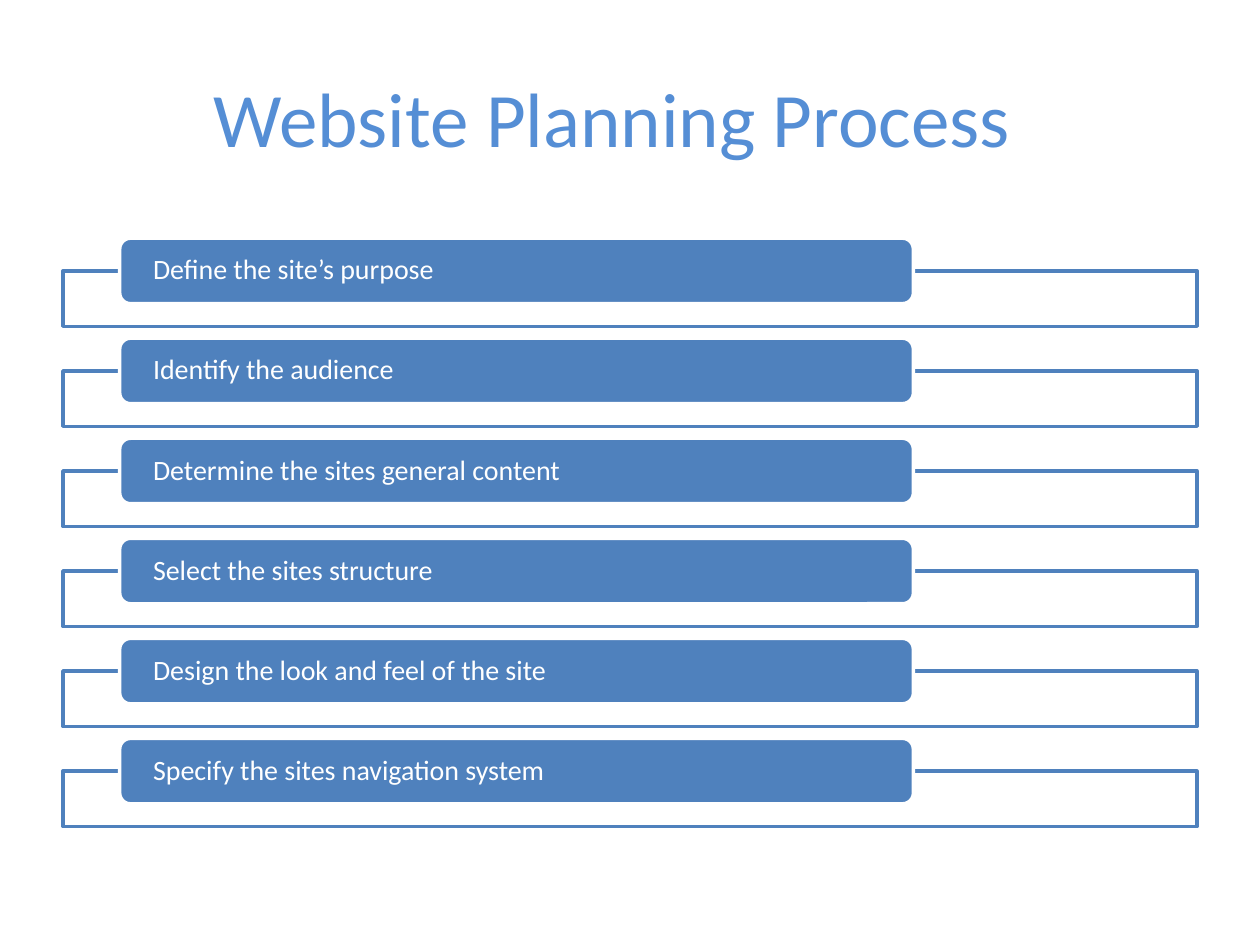
"""Build the Website Planning Process slide."""
from lxml import etree
from pptx import Presentation
from pptx.dml.color import RGBColor
from pptx.enum.shapes import MSO_SHAPE
from pptx.enum.text import MSO_ANCHOR, PP_ALIGN
from pptx.oxml.ns import qn
from pptx.util import Inches, Pt

TITLE = "Website Planning Process"
STEPS = [
    "Define the site’s purpose",
    "Identify the audience",
    "Determine the sites general content",
    "Select the sites structure",
    "Design the look and feel of the site",
    "Specify the sites navigation system",
]

FONT = "Calibri"
BLUE = RGBColor(0x4F, 0x81, 0xBD)
TITLE_BLUE = RGBColor(0x55, 0x8E, 0xD5)
WHITE = RGBColor(0xFF, 0xFF, 0xFF)
RECTANGLE, ROUNDED = MSO_SHAPE.RECTANGLE, MSO_SHAPE.ROUNDED_RECTANGLE
MIDDLE, LEFT, CENTER = MSO_ANCHOR.MIDDLE, PP_ALIGN.LEFT, PP_ALIGN.CENTER

FIRST_TOP, LAST_TOP = 1.89, 5.86
PITCH = (LAST_TOP - FIRST_TOP) / (len(STEPS) - 1)
LABEL_HEIGHT = 0.52


def write(frame, text, size, color, alignment):
    frame.word_wrap = True
    frame.vertical_anchor = MIDDLE
    paragraph = frame.paragraphs[0]
    paragraph.alignment = alignment
    run = paragraph.add_run()
    run.text = text
    run.font.name = FONT
    run.font.size = Pt(size)
    run.font.color.rgb = color
    return paragraph


def add_box(group, kind, left, top, width, height, fill, line):
    shape = group.shapes.add_shape(
        kind, Inches(left), Inches(top), Inches(width), Inches(height))
    shape.shadow.inherit = False
    shape.fill.solid()
    shape.fill.fore_color.rgb = fill
    shape.line.color.rgb = line
    shape.line.width = Pt(2)
    return shape


def add_step(group, text, top):
    frame_box = add_box(
        group, RECTANGLE, 0.5, top + LABEL_HEIGHT / 2, 9, 0.44, WHITE, BLUE)
    fill_color = frame_box.fill._xPr.find(qn("a:solidFill"))[0]
    etree.SubElement(fill_color, qn("a:alpha"), val="90000")

    label = add_box(
        group, ROUNDED, 0.95, top, 6.3, LABEL_HEIGHT, BLUE, WHITE)
    frame = label.text_frame
    frame.margin_left = frame.margin_right = Inches(0.24)
    frame.margin_top = frame.margin_bottom = 0
    write(frame, text, 16, WHITE, LEFT).line_spacing = 0.9


def main():
    presentation = Presentation()
    presentation.slide_width = Inches(10)
    presentation.slide_height = Inches(7.5)
    slide = presentation.slides.add_slide(presentation.slide_layouts[5])

    title = slide.shapes.title
    title.left, title.top = Inches(0.5), Inches(0.3)
    title.width, title.height = Inches(9), Inches(1.25)
    title.text_frame.margin_right = Inches(0.38)
    write(title.text_frame, TITLE, 44, TITLE_BLUE, CENTER)

    group = slide.shapes.add_group_shape()
    for index, step in enumerate(STEPS):
        add_step(group, step, FIRST_TOP + index * PITCH)

    presentation.save("out.pptx")


if __name__ == "__main__":
    main()
